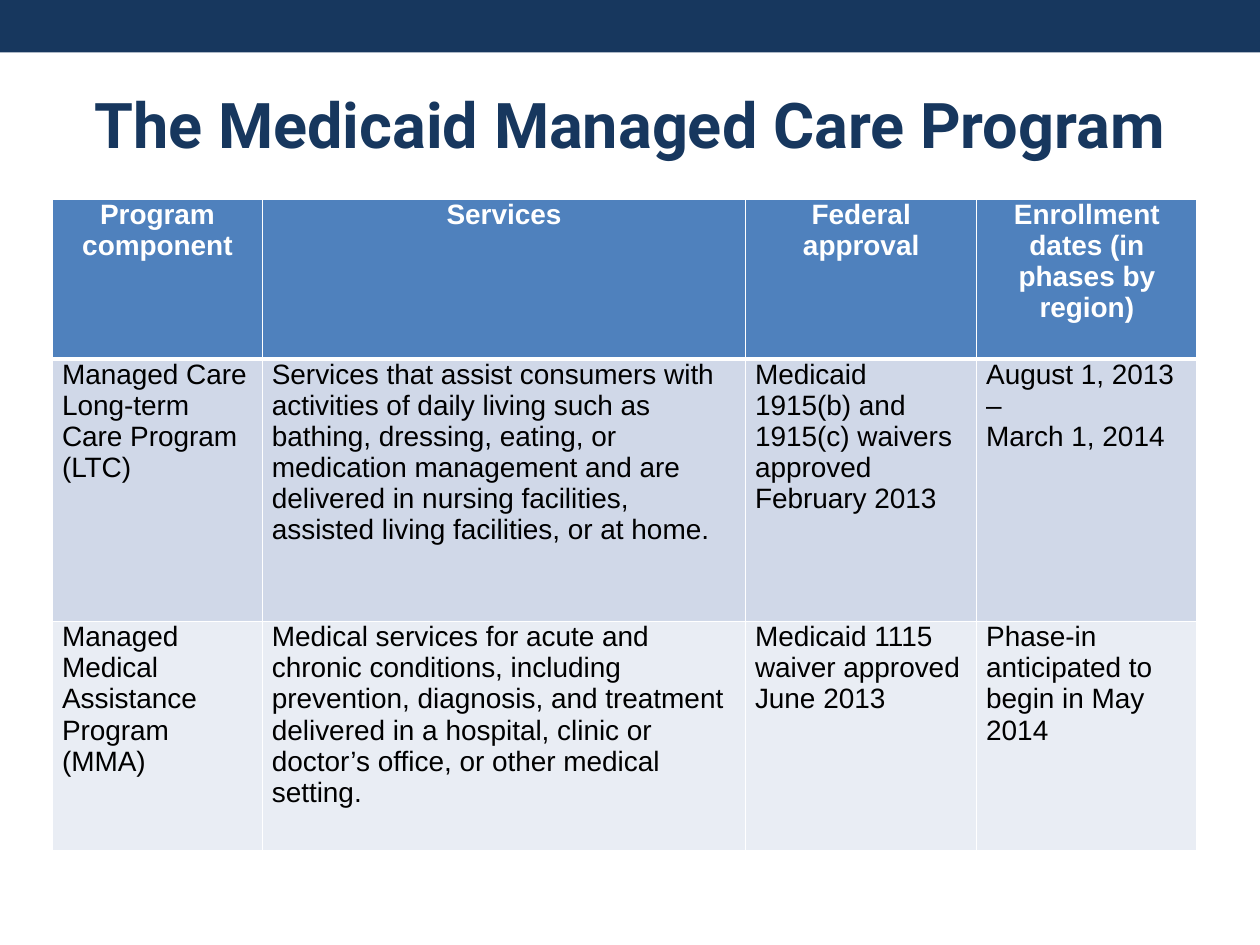
from lxml import etree
from pptx import Presentation
from pptx import util as u
from pptx.dml.color import RGBColor
from pptx.enum import shapes, text
from pptx.oxml.ns import qn

# Content
TITLE = "The Medicaid Managed Care Program"
ROWS = [
    ("Program component", "Services", "Federal approval",
     "Enrollment dates (in phases by region)"),
    ("Managed Care Long-term Care Program (LTC)",
     "Services that assist consumers with activities of daily living such as "
     "bathing, dressing, eating, or medication management and are delivered in "
     "nursing facilities, assisted living facilities, or at home.",
     "Medicaid 1915(b) and 1915(c) waivers approved February 2013",
     "August 1, 2013 –\nMarch 1, 2014"),
    ("Managed Medical Assistance Program (MMA)",
     "Medical services for acute and chronic conditions, including prevention, "
     "diagnosis, and treatment delivered in a hospital, clinic or doctor’s "
     "office, or other medical setting.",
     "Medicaid 1115 waiver approved June 2013",
     "Phase-in anticipated to begin in May 2014"),
]

THEME = {
    "navy": "17375E", "white": "FFFFFF", "black": "000000",
    "row_fills": ("4F81BD", "D0D8E8", "E9EDF4"),
    "title_font": "Roboto", "body_font": "Arial",
    "title_size": 36, "body_size": 16,
    "line": 1, "header_line": 3,
}

# Geometry in centimetres
SLIDE_WIDTH, SLIDE_HEIGHT = 25.4, 19.05
BAR_HEIGHT = 1.06
TITLE_BOX = (1.27, 1.06, 22.86, 2.87)
TABLE_LEFT, TABLE_TOP = 1.06, 4.02
COLUMN_WIDTHS = (4.23, 9.74, 4.66, 4.44)
ROW_HEIGHTS = (3.22, 5.29, 4.62)
CELL_INSET = 0.19


def write(frame, content, *, font, size, color, bold=False,
          align=text.PP_ALIGN.LEFT):
    """Fill a text frame, one paragraph per line of content."""
    frame.word_wrap = True
    frame.text = content
    for paragraph in frame.paragraphs:
        paragraph.alignment = align
        for run in paragraph.runs:
            run.font.name = font
            run.font.size = u.Pt(size)
            run.font.bold = bold
            run.font.color.rgb = RGBColor.from_string(color)


def add_borders(cell, top, bottom):
    """Draw white cell borders; call before the fill is set."""
    properties = cell._tc.get_or_add_tcPr()
    widths = {"lnL": THEME["line"], "lnR": THEME["line"],
              "lnT": top, "lnB": bottom}
    for side, width in widths.items():
        line = etree.SubElement(properties, qn(f"a:{side}"), w=str(u.Pt(width)))
        fill = etree.SubElement(line, qn("a:solidFill"))
        etree.SubElement(fill, qn("a:srgbClr"), val=THEME["white"])


def add_bar(slide):
    bar = slide.shapes.add_shape(shapes.MSO_SHAPE.RECTANGLE, 0, 0,
                                 u.Cm(SLIDE_WIDTH), u.Cm(BAR_HEIGHT))
    bar.shadow.inherit = False
    bar.fill.solid()
    bar.fill.fore_color.rgb = RGBColor.from_string(THEME["navy"])
    bar.line.fill.background()


def add_title(slide):
    box = slide.shapes.add_textbox(*map(u.Cm, TITLE_BOX))
    box.text_frame.vertical_anchor = text.MSO_ANCHOR.MIDDLE
    write(box.text_frame, TITLE, font=THEME["title_font"],
          size=THEME["title_size"], color=THEME["navy"], bold=True,
          align=text.PP_ALIGN.CENTER)


def add_program_table(slide):
    table = slide.shapes.add_table(
        len(ROWS), len(COLUMN_WIDTHS), u.Cm(TABLE_LEFT), u.Cm(TABLE_TOP),
        u.Cm(sum(COLUMN_WIDTHS)), u.Cm(sum(ROW_HEIGHTS))).table
    for column, width in zip(table.columns, COLUMN_WIDTHS):
        column.width = u.Cm(width)
    for row, height in zip(table.rows, ROW_HEIGHTS):
        row.height = u.Cm(height)

    for row_index, contents in enumerate(ROWS):
        header = row_index == 0
        top = THEME["header_line"] if row_index == 1 else THEME["line"]
        bottom = THEME["header_line"] if header else THEME["line"]
        for column_index, content in enumerate(contents):
            cell = table.cell(row_index, column_index)
            cell.margin_left = cell.margin_right = u.Cm(CELL_INSET)
            cell.margin_top = cell.margin_bottom = 0
            add_borders(cell, top, bottom)
            cell.fill.solid()
            cell.fill.fore_color.rgb = RGBColor.from_string(
                THEME["row_fills"][row_index])
            write(cell.text_frame, content, font=THEME["body_font"],
                  size=THEME["body_size"], bold=header,
                  color=THEME["white"] if header else THEME["black"],
                  align=text.PP_ALIGN.CENTER if header else text.PP_ALIGN.LEFT)


def main():
    presentation = Presentation()
    presentation.slide_width = u.Cm(SLIDE_WIDTH)
    presentation.slide_height = u.Cm(SLIDE_HEIGHT)
    slide = presentation.slides.add_slide(presentation.slide_layouts[6])
    add_bar(slide)
    add_title(slide)
    add_program_table(slide)
    presentation.save("out.pptx")


if __name__ == "__main__":
    main()
